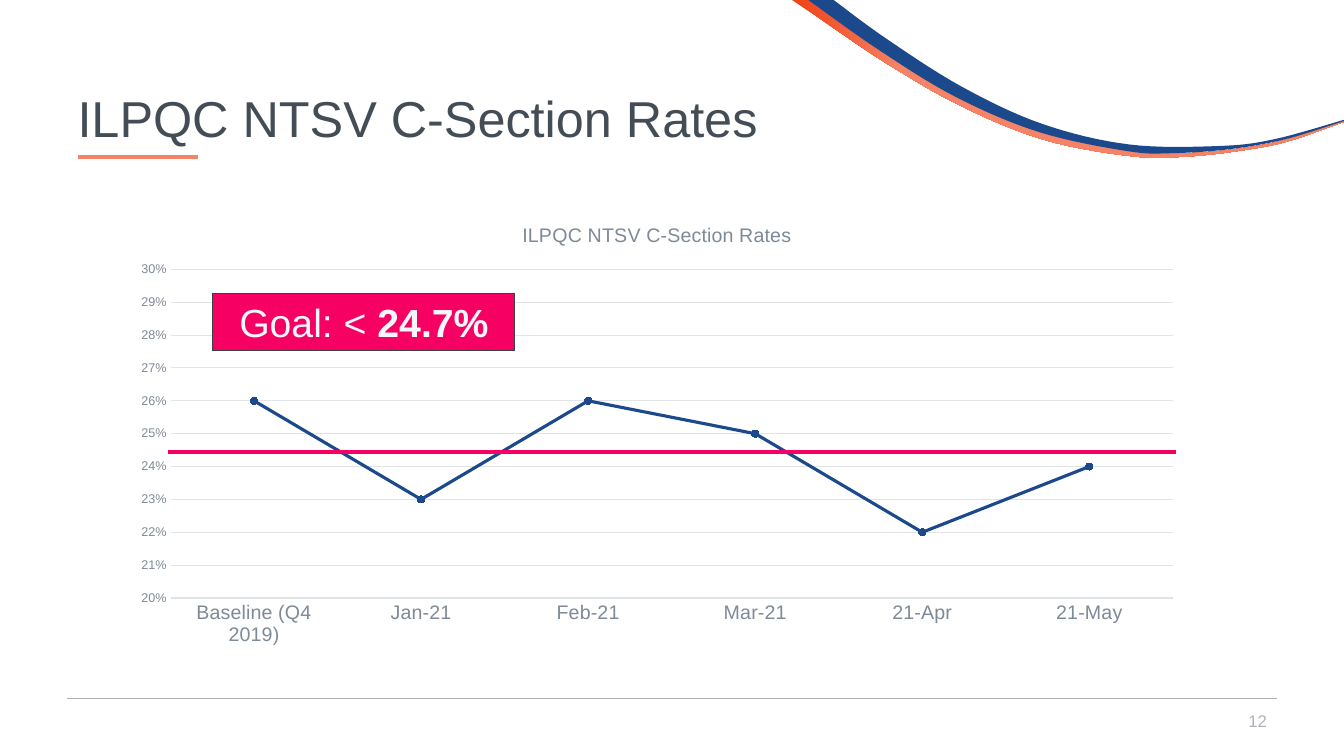
from lxml import etree
from pptx import Presentation
from pptx.chart.data import CategoryChartData
from pptx.dml.color import RGBColor
from pptx.enum.chart import XL_CHART_TYPE as ChartType, XL_MARKER_STYLE as Marker, XL_TICK_MARK as Tick
from pptx.enum.shapes import MSO_CONNECTOR, MSO_SHAPE
from pptx.enum.text import MSO_ANCHOR as Anchor, MSO_AUTO_SIZE as AutoSize, PP_ALIGN as Align
from pptx.oxml.ns import qn
from pptx.util import Cm, Pt

FONT = "Arial"
NAVY, CORAL, ORANGE, PINK = "1C498B", "F58366", "F04115", "F60064"
DARK, GREY, LIGHT, RULE = "444C55", "7E8A98", "AFB3B9", "E1E4E7"
HEADING = "ILPQC NTSV C-Section Rates"

# Ribbon edges in cm: the upper one runs right, the lower one runs back left.
CORAL_UPPER = [(20.45, 0), (22.4, 1.37), (24.33, 2.51), (26.39, 3.38), (28.58, 3.81),
               (29.95, 3.86), (31.34, 3.73), (32.44, 3.51), (33.87, 3.05)]
CORAL_LOWER = [(33.87, 3.07), (32.46, 3.56), (31.37, 3.78), (29.97, 3.94), (28.55, 3.94),
               (26.34, 3.53), (24.26, 2.69), (22.3, 1.57), (20.42, 0.3), (19.96, 0)]
NAVY_UPPER = [(21.01, 0), (22.33, 0.97), (24.23, 2.18), (26.26, 3.12), (28.45, 3.64),
              (30.71, 3.68), (32.11, 3.51), (33.87, 3.02)]
NAVY_LOWER = [(33.87, 3.05), (32.39, 3.51), (30.99, 3.76), (29.57, 3.86), (28.42, 3.81),
              (26.19, 3.33), (24.08, 2.44), (22.12, 1.24), (20.37, 0)]
RATES = {"Baseline (Q4 2019)": 0.26, "Jan-21": 0.23, "Feb-21": 0.26,
         "Mar-21": 0.25, "21-Apr": 0.22, "21-May": 0.24}


def color(hex_string):
    return RGBColor.from_string(hex_string)


def smooth_curve(anchors, steps=8):
    """Return points on a Catmull-Rom curve through the anchors."""
    padded = [anchors[0], *anchors, anchors[-1]]
    points = [anchors[0]]
    for a, b, c, d in zip(padded, padded[1:], padded[2:], padded[3:]):
        for step in range(1, steps + 1):
            t = step / steps
            points.append(tuple(
                (2 * q + (r - p) * t + (2 * p - 5 * q + 4 * r - s) * t**2
                 + (3 * q - p - 3 * r + s) * t**3) / 2
                for p, q, r, s in zip(a, b, c, d)))
    return points


class SlideBuilder:
    """Holds the current slide and draws each kind of element in its style."""

    def __init__(self, presentation):
        self.slide = presentation.slides.add_slide(presentation.slide_layouts[5])
        self.shapes = self.slide.shapes

    def style_font(self, font, size, hex_color, bold=False):
        font.name, font.size, font.bold = FONT, Pt(size), bold
        font.color.rgb = color(hex_color)

    def style_line(self, line, hex_color, width):
        line.color.rgb = color(hex_color)
        line.width = Pt(width)

    def add_runs(self, frame, runs, size, hex_color, align):
        """Fill the frame with one paragraph of (text, bold) runs."""
        frame.word_wrap = True
        frame.vertical_anchor = Anchor.MIDDLE
        paragraph = frame.paragraphs[0]
        paragraph.alignment = align
        for text, bold in runs:
            run = paragraph.add_run()
            run.text = text
            self.style_font(run.font, size, hex_color, bold)
        return paragraph

    def title(self, text, left, top, width, height):
        title = self.shapes.title
        title.left, title.top, title.width, title.height = map(Cm, (left, top, width, height))
        title.text_frame.auto_size = AutoSize.NONE
        paragraph = self.add_runs(title.text_frame, [(text, False)], 36, DARK, Align.LEFT)
        paragraph.line_spacing = 0.9

    def text(self, text, left, top, width, height, size, hex_color, align):
        box = self.shapes.add_textbox(*map(Cm, (left, top, width, height)))
        self.add_runs(box.text_frame, [(text, False)], size, hex_color, align)

    def label(self, runs, left, top, width, height):
        box = self.shapes.add_shape(MSO_SHAPE.RECTANGLE, *map(Cm, (left, top, width, height)))
        box.shadow.inherit = False
        box.fill.solid()
        box.fill.fore_color.rgb = color(PINK)
        self.style_line(box.line, "3C4045", 0.75)
        self.add_runs(box.text_frame, runs, 28, "F4F6FA", Align.CENTER)

    def rule(self, left, right, y, hex_color, width):
        rule = self.shapes.add_connector(
            MSO_CONNECTOR.STRAIGHT, Cm(left), Cm(y), Cm(right), Cm(y))
        self.style_line(rule.line, hex_color, width)
        etree.SubElement(rule.element.spPr, qn("a:effectLst"))

    def ribbon(self, upper, lower, fills):
        """Draw a band between two edges; two fills make a gradient."""
        points = [(Cm(x), Cm(y)) for x, y in smooth_curve(upper) + smooth_curve(lower)]
        builder = self.shapes.build_freeform(*points[0])
        builder.add_line_segments(points[1:], close=True)
        band = builder.convert_to_shape()
        band.shadow.inherit = False
        band.line.fill.background()
        if len(fills) == 1:
            band.fill.solid()
            band.fill.fore_color.rgb = color(fills[0])
            return
        band.fill.gradient()
        band.fill.gradient_angle = 0
        for stop, fill, position in zip(band.fill.gradient_stops, fills, (0, 0.2)):
            stop.color.rgb = color(fill)
            stop.position = position

    def line_chart(self, heading, rates, left, top, width, height):
        data = CategoryChartData(number_format="0%")
        data.categories = list(rates)
        data.add_series("Series 1", list(rates.values()))
        chart = self.shapes.add_chart(
            ChartType.LINE_MARKERS, *map(Cm, (left, top, width, height)), data).chart
        self.style_font(chart.font, 10, DARK)
        chart.has_legend = False
        run = chart.chart_title.text_frame.paragraphs[0].add_run()
        run.text = heading
        self.style_font(run.font, 14, GREY)
        chart.chart_title.include_in_layout = False

        for axis, size in ((chart.category_axis, 14), (chart.value_axis, 9)):
            axis.major_tick_mark = axis.minor_tick_mark = Tick.NONE
            self.style_font(axis.tick_labels.font, size, GREY)
        self.style_line(chart.category_axis.format.line, RULE, 0.75)
        values = chart.value_axis
        values.format.line.fill.background()
        values.minimum_scale, values.maximum_scale, values.major_unit = 0.2, 0.3, 0.01
        values.tick_labels.number_format = "0%"
        values.tick_labels.number_format_is_linked = False
        self.style_line(values.major_gridlines.format.line, RULE, 0.75)

        chart.plots[0].vary_by_categories = False
        series = chart.plots[0].series[0]
        series.smooth = False
        self.style_line(series.format.line, NAVY, 2.25)
        series.marker.style, series.marker.size = Marker.CIRCLE, 5
        series.marker.format.fill.solid()
        series.marker.format.fill.fore_color.rgb = color(NAVY)
        self.style_line(series.marker.format.line, NAVY, 0.75)


def main():
    presentation = Presentation()
    presentation.slide_width, presentation.slide_height = Cm(33.87), Cm(19.05)
    builder = SlideBuilder(presentation)
    builder.ribbon(CORAL_UPPER, CORAL_LOWER, [ORANGE, CORAL])
    builder.ribbon(NAVY_UPPER, NAVY_LOWER, [NAVY])
    builder.rule(1.7, 32.18, 17.6, LIGHT, 0.5)
    builder.rule(1.96, 5, 3.96, CORAL, 2.5)
    builder.title(HEADING, 1.7, 1.22, 30.48, 3.68)
    builder.line_chart(HEADING, RATES, 3.02, 5.16, 27.08, 11.35)
    builder.rule(4.24, 29.64, 11.38, PINK, 3)
    builder.label([("Goal: < ", False), ("24.7%", True)], 5.36, 7.39, 7.62, 1.45)
    builder.text("12", 24.56, 17.65, 7.62, 1.02, 12, LIGHT, Align.RIGHT)
    presentation.save("out.pptx")


if __name__ == "__main__":
    main()
